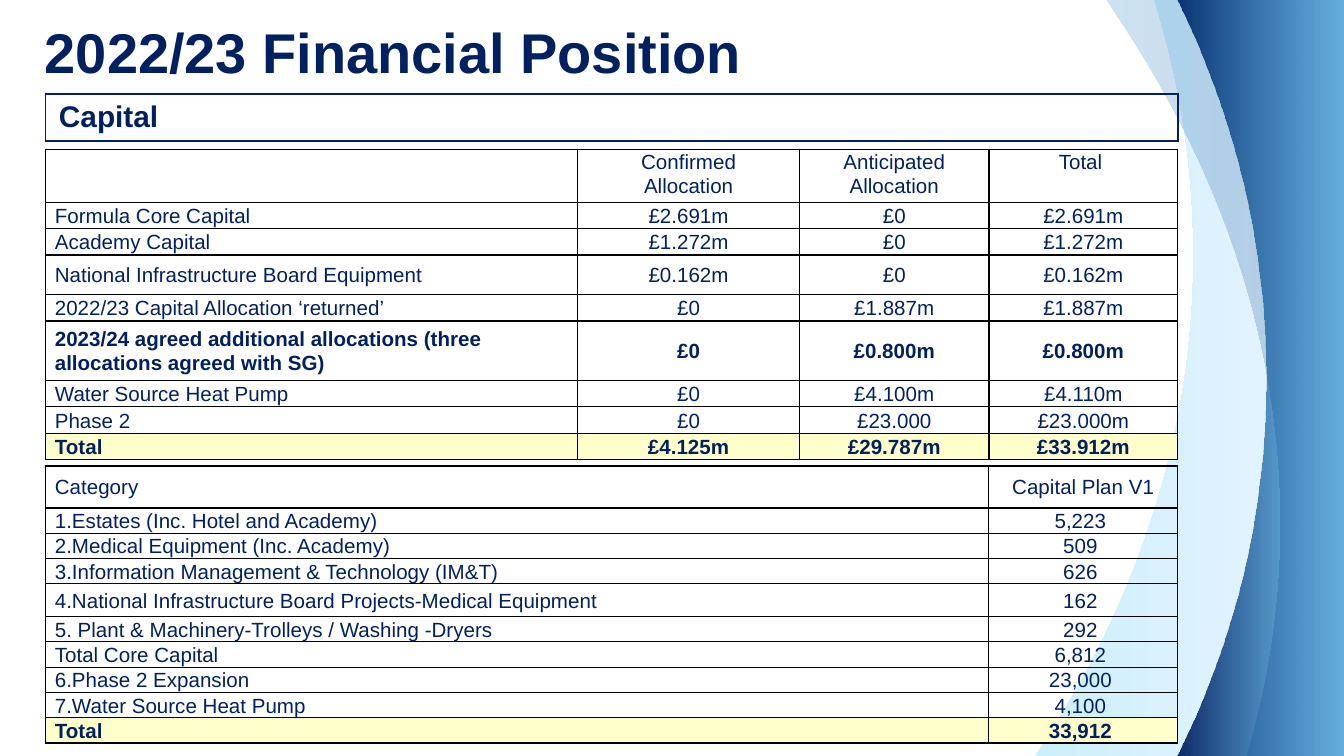
from lxml import etree
from pptx import Presentation
from pptx.dml.color import RGBColor
from pptx.enum.text import MSO_ANCHOR, MSO_AUTO_SIZE, PP_ALIGN
from pptx.oxml.ns import qn
from pptx.util import Pt

LEFT, CENTER = PP_ALIGN.LEFT, PP_ALIGN.CENTER
TOP, MIDDLE, BOTTOM = MSO_ANCHOR.TOP, MSO_ANCHOR.MIDDLE, MSO_ANCHOR.BOTTOM
NO_FIT = MSO_AUTO_SIZE.NONE

WIDTH, HEIGHT = 720, 405
TABLE_LEFT = 24.4

SWOOSHES = [
    ([(554.4, 405), (609.1, 324), (639.4, 233.3), (639.4, 136.8),
      (639.4, 90), (632.2, 43.9), (618.5, 0)],
     [("00B0F0", 20), ("99CCFF", 20)]),
    ([(630.7, 405), (661.7, 342), (678.2, 274.3), (678.2, 203),
      (678.2, 132.5), (661.7, 64), (630.7, 0)],
     [("002060", 94), ("66CCFF", 80)]),
    ([(668.2, 405), (679.7, 365.8), (686.2, 324), (686.2, 280.8),
      (686.2, 180.7), (652.3, 85.7), (592.6, 0)],
     [("0070C0", 20), ("002060", 20)]),
]

ALLOCATIONS = [
    ("", "Confirmed\nAllocation", "Anticipated\nAllocation", "Total "),
    ("Formula Core Capital", "£2.691m", "£0", "£2.691m"),
    ("Academy Capital", "£1.272m", "£0", "£1.272m"),
    ("National Infrastructure Board Equipment", "£0.162m", "£0", "£0.162m"),
    ("2022/23 Capital Allocation ‘returned’", "£0", "£1.887m", "£1.887m"),
    ("2023/24 agreed additional allocations (three allocations agreed with SG)",
     "£0", "£0.800m", "£0.800m"),
    ("Water Source Heat Pump", "£0", "£4.100m", "£4.110m"),
    ("Phase 2", "£0", "£23.000", "£23.000m"),
    ("Total", "£4.125m", "£29.787m", "£33.912m"),
]

CAPITAL_PLAN = [
    ("Category", "Capital Plan V1"),
    ("1.Estates (Inc. Hotel and Academy)", "5,223 "),
    ("2.Medical Equipment (Inc. Academy)", "509 "),
    ("3.Information Management & Technology (IM&T)", "626 "),
    ("4.National Infrastructure Board Projects-Medical Equipment", "162 "),
    ("5. Plant & Machinery-Trolleys / Washing -Dryers", "292 "),
    ("Total Core Capital", "6,812 "),
    ("6.Phase 2 Expansion", "23,000 "),
    ("7.Water Source Heat Pump", "4,100 "),
    ("Total", "33,912 "),
]


def color(value):
    """Turn a hex string into a colour."""
    return RGBColor.from_string(value)


def write(frame, text, size=11, bold=False, ink="002060", font="Arial", align=LEFT, spacing=1.0):
    """Fill a text frame with one formatted paragraph per line of text."""
    for index, line in enumerate(text.split("\n")):
        para = frame.add_paragraph() if index else frame.paragraphs[0]
        para.alignment = align
        para.line_spacing = spacing
        if line:
            span = para.add_run()
            span.text = line
            span.font.size = Pt(size)
            span.font.bold = bold
            span.font.name = font
            span.font.color.rgb = color(ink)


def set_margins(holder, side, edge):
    """Set the side and the top and bottom margins of a cell or text frame."""
    holder.margin_left = holder.margin_right = Pt(side)
    holder.margin_top = holder.margin_bottom = Pt(edge)


def add_borders(cell, ink, weight):
    """Draw the four borders of a cell."""
    properties = cell._tc.get_or_add_tcPr()
    for side in ("a:lnL", "a:lnR", "a:lnT", "a:lnB"):
        line = etree.SubElement(properties, qn(side), w=str(Pt(weight)))
        fill = etree.SubElement(line, qn("a:solidFill"))
        etree.SubElement(fill, qn("a:srgbClr"), val=ink)


def bend(shape, curves):
    """Turn each leading group of three line segments into one cubic curve."""
    segments = list(shape._element.spPr.iter(qn("a:lnTo")))
    for index in range(curves):
        group = segments[3 * index:3 * index + 3]
        curve = etree.Element(qn("a:cubicBezTo"))
        group[0].addprevious(curve)
        for segment in group:
            curve.append(segment[0])
            segment.getparent().remove(segment)


class FinanceSlide:
    """Hold the house style and the current page."""

    total_fill = "FFFFCC"

    def __init__(self, deck):
        """Add a page that has only a title."""
        self.page = deck.slides.add_slide(deck.slide_layouts[5])

    def title(self, text, left, top, width, height):
        """Place the page title."""
        box = self.page.shapes.title
        box.left, box.top, box.width, box.height = map(Pt, (left, top, width, height))
        frame = box.text_frame
        frame.auto_size = NO_FIT
        frame.word_wrap = True
        frame.vertical_anchor = BOTTOM
        set_margins(frame, 0, 0)
        write(frame, text, size=30, bold=True)

    def swoosh(self, edge, stops):
        """Fill the area from a curved left edge to the right side of the page."""
        points = [(Pt(x), Pt(y)) for x, y in edge + [(WIDTH, 0), (WIDTH, HEIGHT)]]
        builder = self.page.shapes.build_freeform(*points[0])
        builder.add_line_segments(points[1:], close=True)
        shape = builder.convert_to_shape()
        bend(shape, 2)
        shape.shadow.inherit = False
        shape.line.fill.background()
        shape.fill.gradient()
        shape.fill.gradient_angle = 0
        for stop, (ink, _) in zip(shape.fill.gradient_stops, stops):
            stop.color.rgb = color(ink)
        tones = shape._element.spPr.iter(qn("a:srgbClr"))
        for tone, (_, opacity) in zip(tones, stops):
            etree.SubElement(tone, qn("a:alpha"), val=str(opacity * 1000))

    def table(self, rows, top, widths, heights, bold_rows=(), total_row=None,
              header_anchor=MIDDLE, margins=(5, 0), border=("000000", 0.75), size=11, spacing=1.07):
        """Add a ruled table with a left-aligned first column."""
        frame = self.page.shapes.add_table(
            len(rows), len(widths), Pt(TABLE_LEFT), Pt(top), Pt(sum(widths)), Pt(sum(heights)))
        table = frame.table
        table.first_row = table.horz_banding = False
        for column, width in zip(table.columns, widths):
            column.width = Pt(width)
        for index, (row, height) in enumerate(zip(rows, heights)):
            table.rows[index].height = Pt(height)
            for position, text in enumerate(row):
                cell = table.cell(index, position)
                set_margins(cell, *margins)
                cell.vertical_anchor = MIDDLE if index else header_anchor
                write(cell.text_frame, text, size=size, bold=index in bold_rows,
                      align=CENTER if position else LEFT, spacing=spacing)
                add_borders(cell, *border)
                if index == total_row:
                    cell.fill.solid()
                    cell.fill.fore_color.rgb = color(self.total_fill)
                else:
                    cell.fill.background()


def main():
    """Build the financial position slide."""
    deck = Presentation()
    deck.slide_width, deck.slide_height = Pt(WIDTH), Pt(HEIGHT)
    slide = FinanceSlide(deck)
    for edge, stops in SWOOSHES:
        slide.swoosh(edge, stops)
    slide.title("2022/23 Financial Position", 24, 10.8, 486.7, 34.6)
    slide.table([("Capital",)], 50.3, [606.6], [25.2], bold_rows=(0,), header_anchor=TOP,
                margins=(7.2, 3.6), border=("002060", 1), size=16, spacing=1.0)
    slide.table(ALLOCATIONS, 80, [285.1, 118.9, 101.5, 101.1],
                [28.5] + [14.1] * 2 + [21.1, 14.2, 31.9] + [14.2] * 3,
                bold_rows=(5, 8), total_row=8, header_anchor=TOP)
    slide.table(CAPITAL_PLAN, 249.7, [505.3, 101.3],
                [22.4] + [13.55] * 3 + [17.6] + [13.55] * 5,
                bold_rows=(9,), total_row=9)
    deck.save("out.pptx")


if __name__ == "__main__":
    main()
